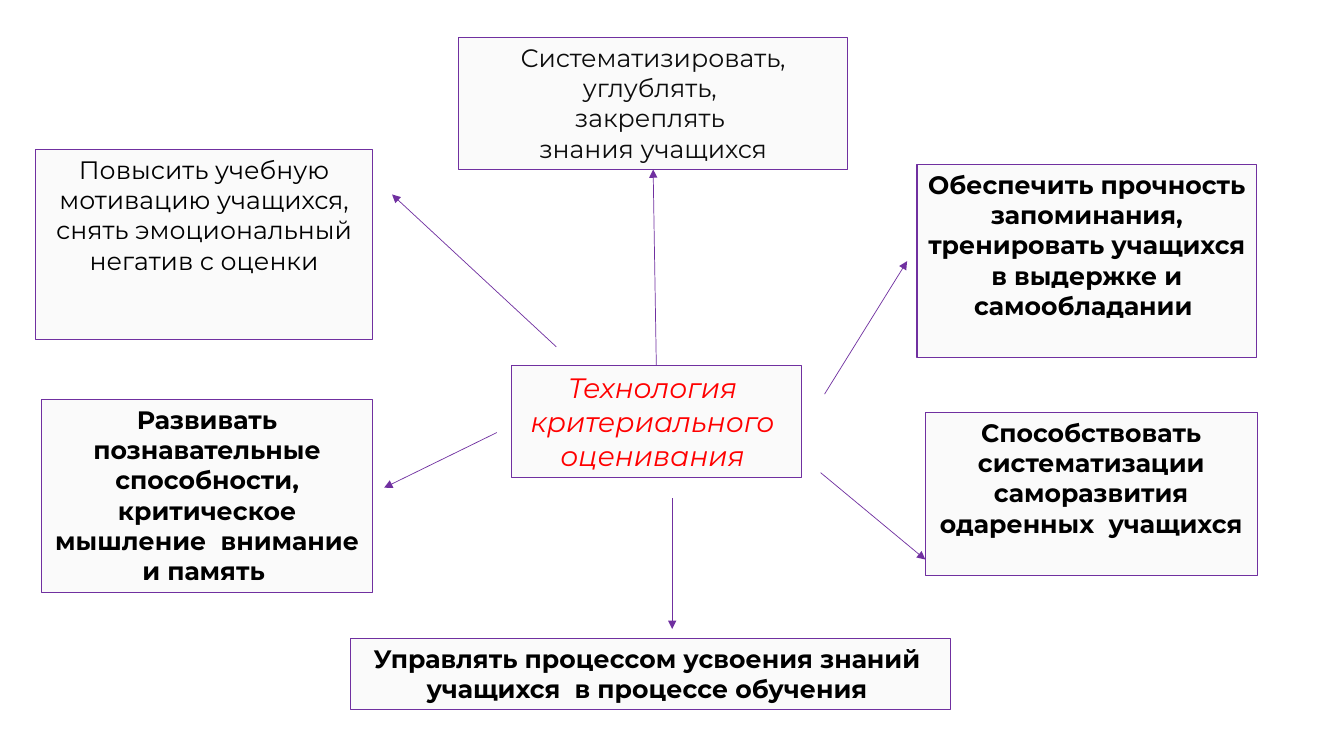
from dataclasses import dataclass
from lxml.etree import SubElement
from pptx import Presentation
from pptx.dml.color import RGBColor
from pptx.enum.shapes import MSO_CONNECTOR as Connector, MSO_SHAPE as Preset
from pptx.enum.text import MSO_ANCHOR as Anchor, PP_ALIGN as Align
from pptx.oxml.ns import qn
from pptx.util import Cm, Pt


@dataclass(frozen=True)
class Theme:
    font: str = "Montserrat"
    panel: RGBColor = RGBColor(0xFA, 0xFA, 0xFA)
    accent: RGBColor = RGBColor(0x70, 0x30, 0xA0)
    border: Pt = Pt(0.75)
    arrow: Pt = Pt(0.5)


THEME = Theme()
BLACK = RGBColor(0, 0, 0)
STYLES = {
    "topic": {"size": Pt(20), "italic": True, "color": RGBColor(0xFF, 0, 0)},
    "soft": {"size": Pt(18), "color": RGBColor(0x0D, 0x0D, 0x0D)},
    "plain": {"size": Pt(18), "color": BLACK},
    "strong": {"size": Pt(18), "bold": True, "color": BLACK},
}

BOXES = [
    ((12.88, 9.22, 7.32, 2.82), "topic", False,
     ["Технология ", "критериального ", "оценивания "]),
    ((11.56, 0.94, 9.8, 3.33), "soft", True,
     ["Систематизировать, углублять, ", "закреплять ", "знания учащихся"]),
    ((23.11, 4.14, 8.56, 4.88), "strong", True,
     ["Обеспечить прочность запоминания, тренировать учащихся в выдержке и самообладании "]),
    ((23.32, 10.39, 8.36, 4.11), "strong", True,
     ["Способствовать систематизации саморазвития одаренных  учащихся"]),
    ((8.84, 16.08, 15.11, 1.8), "strong", False,
     ["Управлять процессом усвоения знаний ", "учащихся  в процессе обучения "]),
    ((1.04, 10.06, 8.36, 4.88), "strong", True,
     ["Развивать познавательные способности, критическое мышление  внимание и память "]),
    ((0.89, 3.76, 8.51, 4.8), "plain", True,
     ["Повысить учебную мотивацию учащихся, снять эмоциональный негатив с оценки"]),
]

ARROWS = [
    (16.54, 9.22, 16.46, 4.27),
    (20.78, 9.93, 22.86, 6.58),
    (20.68, 11.91, 23.32, 14.1),
    (16.94, 12.55, 16.94, 15.85),
    (12.52, 10.9, 9.68, 12.29),
    (14.02, 8.74, 9.88, 4.9),
]


def apply_format(target, values):
    for name, value in values.items():
        setattr(target, name, value)


def add_box(slide, place, style, wrap, lines):
    shape = slide.shapes.add_shape(Preset.RECTANGLE, *map(Cm, place))
    shape.shadow.inherit = False
    shape.fill.solid()
    shape.fill.fore_color.rgb = THEME.panel
    shape.line.color.rgb = THEME.accent
    shape.line.width = THEME.border
    frame = shape.text_frame
    apply_format(frame, {"word_wrap": wrap, "vertical_anchor": Anchor.TOP})
    frame.text = "\n".join(lines)
    values = dict(STYLES[style], name=THEME.font)
    color = values.pop("color")
    for paragraph in frame.paragraphs:
        paragraph.alignment = Align.CENTER
        font = paragraph.runs[0].font
        apply_format(font, values)
        font.color.rgb = color


def add_arrow(slide, ends):
    arrow = slide.shapes.add_connector(Connector.STRAIGHT, *map(Cm, ends))
    arrow.line.color.rgb = THEME.accent
    arrow.line.width = THEME.arrow
    properties = arrow.line._get_or_add_ln()
    SubElement(properties, qn("a:tailEnd"), type="triangle")
    SubElement(properties.getparent(), qn("a:effectLst"))


def main():
    presentation = Presentation()
    apply_format(presentation, {"slide_width": Cm(33.87), "slide_height": Cm(19.05)})
    slide = presentation.slides.add_slide(presentation.slide_layouts.get_by_name("Blank"))
    for box in BOXES:
        add_box(slide, *box)
    for ends in ARROWS:
        add_arrow(slide, ends)
    presentation.save("out.pptx")


if __name__ == "__main__":
    main()
